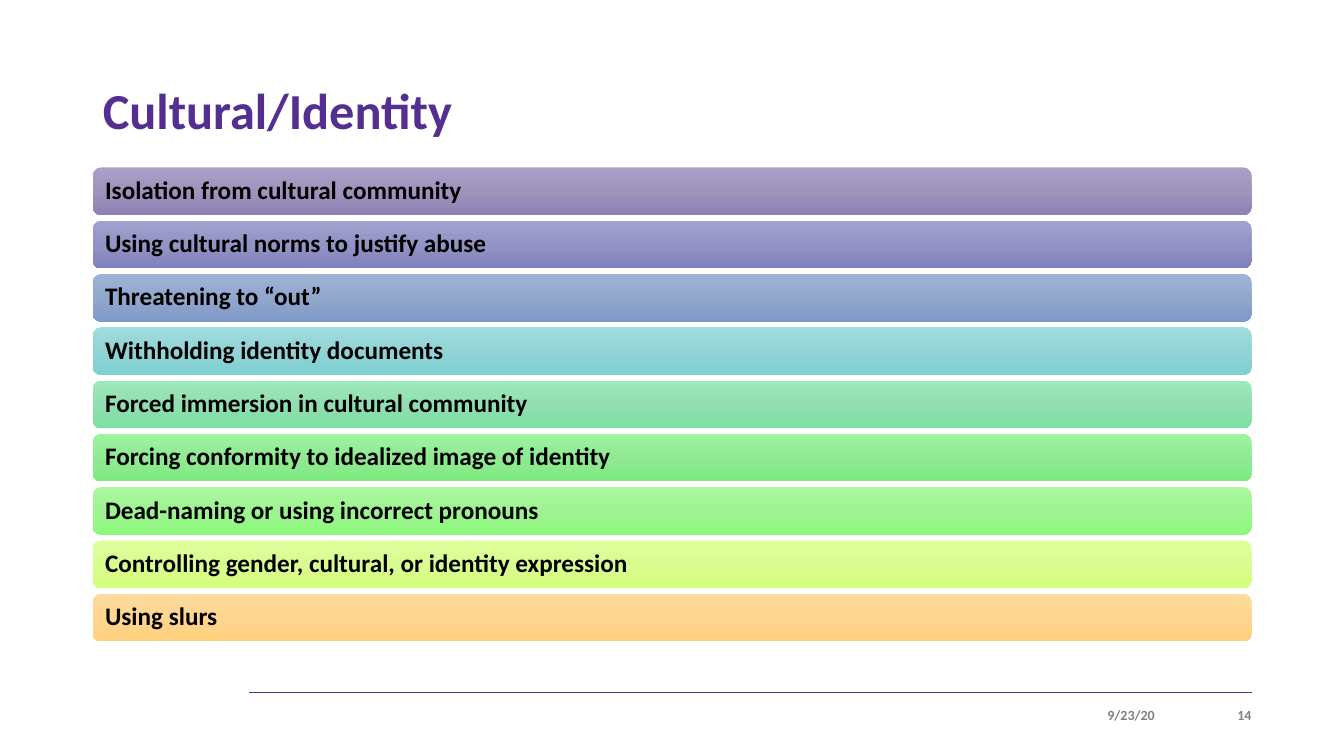
from copy import deepcopy
from dataclasses import dataclass

from pptx import Presentation
from pptx.dml.color import RGBColor
from pptx.enum.shapes import MSO_CONNECTOR as Connector, MSO_SHAPE as Shape
from pptx.enum.text import MSO_ANCHOR as Anchor, MSO_AUTO_SIZE as AutoSize, PP_ALIGN as Align
from pptx.oxml.ns import qn
from pptx.oxml.xmlchemy import OxmlElement
from pptx.util import Cm, Pt


@dataclass(frozen=True)
class Theme:
    font: str = "Calibri"
    purple: str = "542E91"
    black: str = "000000"
    gray: str = "808080"
    title_size: int = 36
    row_size: int = 18
    footer_size: int = 10


THEME = Theme()

# Each row: wording, then its top, middle and bottom colours
TACTICS = [
    ("Isolation from cultural community", ("AAA0C7", "9E94BC", "8E80B5")),
    ("Using cultural norms to justify abuse", ("A0A1CE", "9394C4", "7F81BE")),
    ("Threatening to “out”", ("9FB3D6", "92A7CC", "7E9AC8")),
    ("Withholding identity documents", ("9FDDDF", "92D3D5", "7DD0D3")),
    ("Forced immersion in cultural community", ("9EE9BB", "91DEB0", "7DDFA4")),
    ("Forcing conformity to idealized image of identity", ("9EF3A0", "91E993", "7CEB7F")),
    ("Dead-naming or using incorrect pronouns", ("ABF99E", "9EF490", "8DF87C")),
    ("Controlling gender, cultural, or identity expression", ("DFFE9E", "D9FC90", "D6FF7C")),
    ("Using slurs", ("FFDB9E", "FFD590", "FFD07C")),
]


def write(frame, text, *, size, color, align=Align.LEFT, inset=0.25, spacing=None):
    frame.word_wrap = True
    frame.auto_size = AutoSize.NONE
    frame.vertical_anchor = Anchor.MIDDLE
    frame.margin_left = frame.margin_right = Cm(inset)
    frame.margin_top = frame.margin_bottom = Cm(0.13)
    frame.text = text
    paragraph = frame.paragraphs[0]
    paragraph.alignment = align
    paragraph.line_spacing = spacing
    font = paragraph.runs[0].font
    font.name, font.size, font.bold = THEME.font, Pt(size), True
    font.color.rgb = RGBColor.from_string(color)


def shade(shape, colors):
    """Fill from top to bottom with evenly spaced colours."""
    shape.fill.gradient()
    shape.fill.gradient_angle = 270
    stop_list = shape.fill._xPr.find(".//" + qn("a:gsLst"))
    stop_list.insert(1, deepcopy(stop_list[0]))
    for index, (stop, color) in enumerate(zip(shape.fill.gradient_stops, colors)):
        stop.position = index / (len(colors) - 1)
        stop.color.rgb = RGBColor.from_string(color)


def add_title(slide, left, top, width, height):
    title = slide.shapes.title
    title.left, title.top, title.width, title.height = map(Cm, (left, top, width, height))
    write(title.text_frame, "Cultural/Identity", size=THEME.title_size,
          color=THEME.purple, spacing=0.9)


def add_tactics(slide, left, top, width, height):
    row_height = 1.2
    pitch = (height - row_height) / (len(TACTICS) - 1)
    for index, (tactic, colors) in enumerate(TACTICS):
        row = slide.shapes.add_shape(Shape.ROUNDED_RECTANGLE, Cm(left),
                                     Cm(top + index * pitch), Cm(width), Cm(row_height))
        row.shadow.inherit = False
        row.line.fill.background()
        shade(row, colors)
        write(row.text_frame, tactic, size=THEME.row_size, color=THEME.black, spacing=0.9)


def add_footer(slide, left, top, width, height):
    right = left + width
    # Rule above the footer
    rule = slide.shapes.add_connector(Connector.STRAIGHT, Cm(left), Cm(top), Cm(right), Cm(top))
    rule.line.color.rgb = RGBColor.from_string(THEME.purple)
    rule.line.width = Pt(0.5)
    rule._element.spPr.append(OxmlElement("a:effectLst"))
    # Date and page number, both set flush right
    text_height = 0.71
    for text, text_right, text_width in (("9/23/20", right - 2.44, 7.62), ("14", right, 2)):
        box = slide.shapes.add_textbox(Cm(text_right - text_width), Cm(top + height - text_height),
                                       Cm(text_width), Cm(text_height))
        write(box.text_frame, text, size=THEME.footer_size, color=THEME.gray,
              align=Align.RIGHT, inset=0)


def main():
    deck = Presentation()
    deck.slide_width, deck.slide_height = Cm(33.87), Cm(19.05)
    slide = deck.slides.add_slide(deck.slide_layouts.get_by_name("Title Only"))
    add_title(slide, 2.34, 1.02, 29.2, 3.68)
    add_tactics(slide, 2.34, 4.22, 29.2, 11.94)
    add_footer(slide, 6.28, 17.45, 25.26, 0.91)
    deck.save("out.pptx")


if __name__ == "__main__":
    main()
